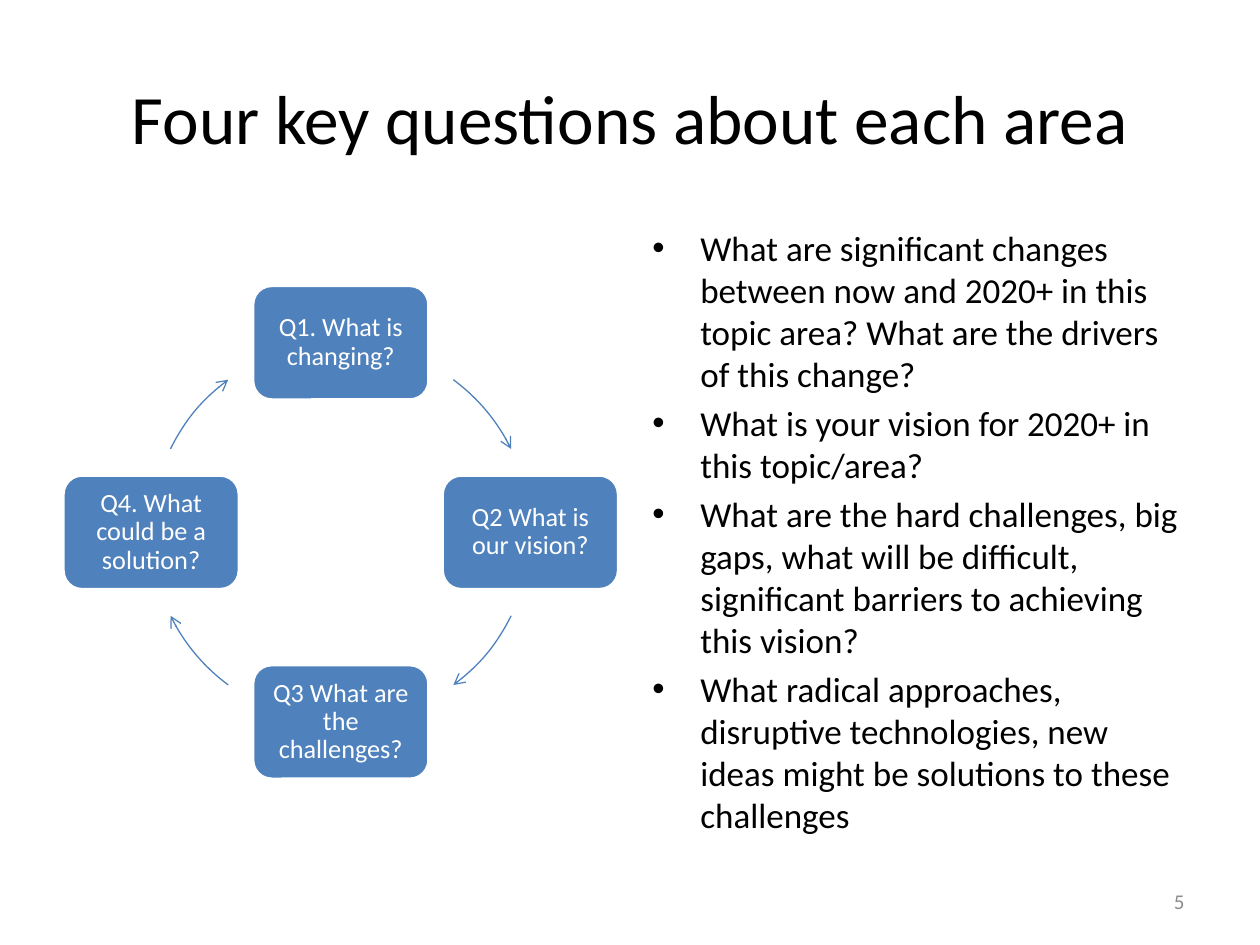
import math

from lxml import etree
from pptx import Presentation
from pptx import util as u
from pptx.dml.color import RGBColor
from pptx.enum import shapes, text
from pptx.oxml.ns import qn

BLACK = RGBColor(0x00, 0x00, 0x00)
WHITE = RGBColor(0xFF, 0xFF, 0xFF)
BLUE = RGBColor(0x4F, 0x81, 0xBD)
GRAY = RGBColor(0x8C, 0x8C, 0x8C)

presentation = Presentation()
presentation.slide_width = u.Inches(10)
presentation.slide_height = u.Inches(7.5)
slide = presentation.slides.add_slide(presentation.slide_layouts[6])


def write_text(shape, lines, size, color=BLACK, align=text.PP_ALIGN.LEFT,
               anchor=text.MSO_ANCHOR.MIDDLE, margin=None, spacing=None,
               before=0, bullet_indent=None):
    frame = shape.text_frame
    frame.word_wrap = True
    frame.vertical_anchor = anchor
    if margin is not None:
        frame.margin_left = frame.margin_right = u.Inches(margin)
        frame.margin_top = frame.margin_bottom = u.Inches(margin)
    for index, line in enumerate(lines):
        paragraph = frame.paragraphs[0] if index == 0 else frame.add_paragraph()
        paragraph.alignment = align
        paragraph.space_before = u.Pt(before)
        if spacing:
            paragraph.line_spacing = spacing
        run = paragraph.add_run()
        run.text = line
        run.font.name = "Calibri"
        run.font.size = u.Pt(size)
        run.font.color.rgb = color
        if bullet_indent:
            properties = paragraph._p.get_or_add_pPr()
            properties.set("marL", str(u.Inches(bullet_indent)))
            properties.set("indent", str(-u.Inches(bullet_indent)))
            etree.SubElement(properties, qn("a:buFont"), typeface="Arial")
            etree.SubElement(properties, qn("a:buChar"), char="•")


def add_text_box(left, top, width, height):
    return slide.shapes.add_textbox(u.Inches(left), u.Inches(top),
                                    u.Inches(width), u.Inches(height))


# Title
write_text(add_text_box(0.5, 0.3, 9, 1.25), ["Four key questions about each area"],
           39.6, align=text.PP_ALIGN.CENTER)

# Cycle of questions, clockwise from the top
RING_LEFT, RING_TOP, DIAMETER = 1.2, 2.72, 3.01
RADIUS = DIAMETER / 2
CENTER_X, CENTER_Y = RING_LEFT + RADIUS, RING_TOP + RADIUS
BOX_WIDTH, BOX_HEIGHT = 1.4, 0.91
ARC_SWEEP = 27.5
DEGREE = 60000
cycle = [
    # question, box angle, start angle of the arrow after it
    ("Q1. What is changing?", -90, 306.4),
    ("Q2 What is our vision?", 0, 26.1),
    ("Q3 What are the challenges?", 90, 126.4),
    ("Q4. What could be a solution?", 180, 206.1),
]
for question, box_angle, arc_start in cycle:
    angle = math.radians(box_angle)
    box = slide.shapes.add_shape(
        shapes.MSO_SHAPE.ROUNDED_RECTANGLE,
        u.Inches(CENTER_X + RADIUS * math.cos(angle) - BOX_WIDTH / 2),
        u.Inches(CENTER_Y + RADIUS * math.sin(angle) - BOX_HEIGHT / 2),
        u.Inches(BOX_WIDTH), u.Inches(BOX_HEIGHT))
    box.shadow.inherit = False
    box.fill.solid()
    box.fill.fore_color.rgb = BLUE
    box.line.color.rgb = WHITE
    box.line.width = u.Pt(2)
    write_text(box, [question], 15, color=WHITE, align=text.PP_ALIGN.CENTER,
               margin=0.1, spacing=0.9)

    # Curved arrow to the next box, framed by the whole ring
    left, top = u.Inches(RING_LEFT), u.Inches(RING_TOP)
    size, radius = u.Inches(DIAMETER), u.Inches(RADIUS)
    builder = slide.shapes.build_freeform(left, top)
    builder.add_line_segments([(left + size, top + size)], close=False)
    arrow = builder.convert_to_shape()
    arrow.shadow.inherit = False
    arrow.fill.background()
    arrow.line.color.rgb = BLUE
    arrow.line.width = u.Pt(0.75)
    etree.SubElement(arrow.line._get_or_add_ln(), qn("a:tailEnd"), type="arrow")

    # Swap the diagonal of the frame for an arc of the ring
    outline = next(arrow._element.iter(qn("a:path")))
    for segment in list(outline):
        outline.remove(segment)
    angle = math.radians(arc_start)
    move = etree.SubElement(outline, qn("a:moveTo"))
    etree.SubElement(move, qn("a:pt"),
                     x=str(round(radius * (1 + math.cos(angle)))),
                     y=str(round(radius * (1 + math.sin(angle)))))
    etree.SubElement(outline, qn("a:arcTo"), wR=str(radius), hR=str(radius),
                     stAng=str(round(arc_start * DEGREE)),
                     swAng=str(round(ARC_SWEEP * DEGREE)))

# Explanations
explanations = [
    "What are significant changes between now and 2020+ in this topic area? "
    "What are the drivers of this change?",
    "What is your vision for 2020+ in this topic/area?",
    "What are the hard challenges, big gaps, what will be difficult, "
    "significant barriers to achieving this vision?",
    "What radical approaches, disruptive technologies, new ideas might be "
    "solutions to these challenges",
]
write_text(add_text_box(5.08, 1.75, 4.42, 4.95), explanations, 20,
           anchor=text.MSO_ANCHOR.TOP, before=4, bullet_indent=0.38)

# Slide number
write_text(add_text_box(7.17, 6.95, 2.33, 0.4), ["5"], 12, color=GRAY,
           align=text.PP_ALIGN.RIGHT)

presentation.save("out.pptx")
